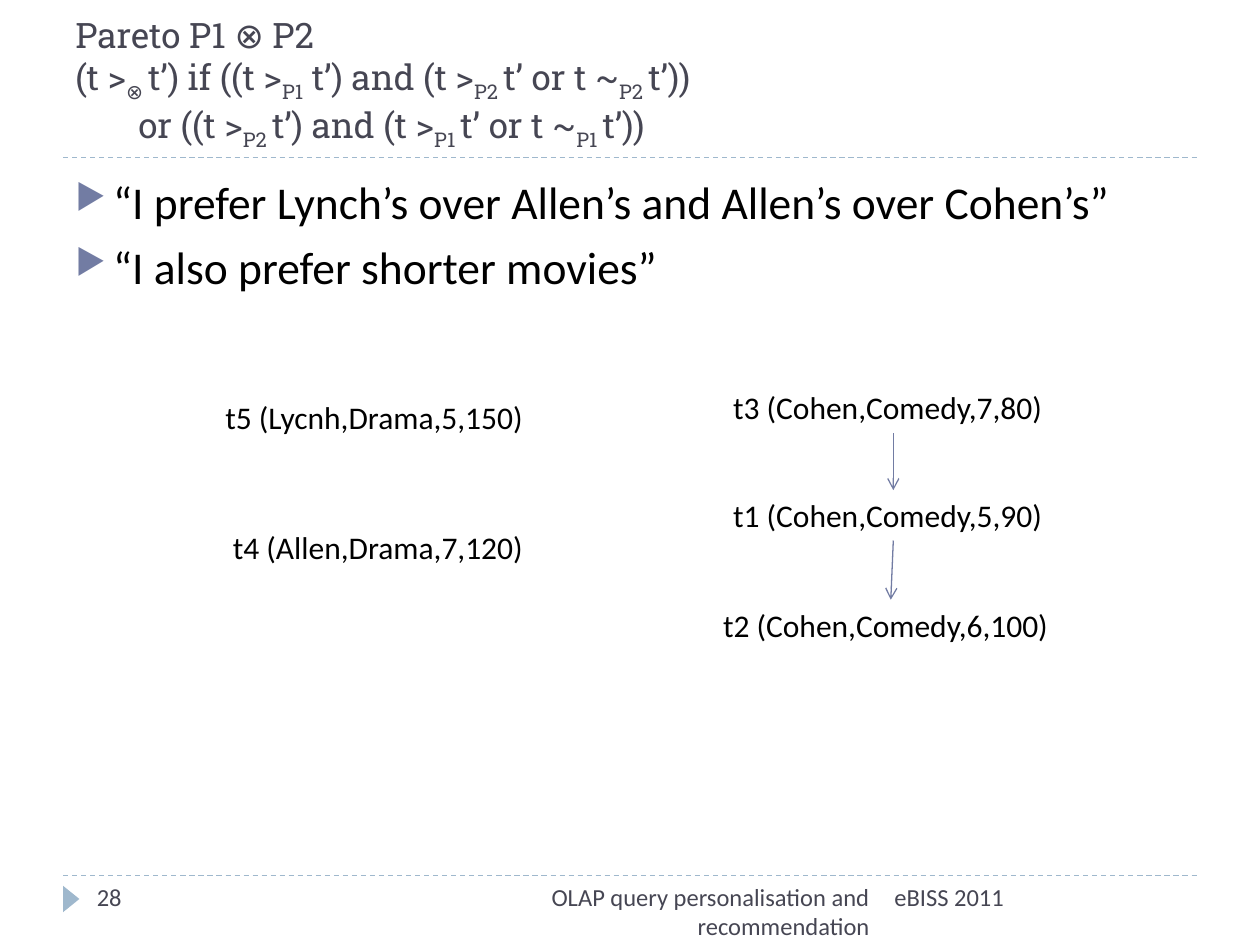
from lxml import etree
from pptx import Presentation
from pptx.dml.color import RGBColor
from pptx.enum.dml import MSO_LINE
from pptx.enum.shapes import MSO_CONNECTOR, MSO_SHAPE
from pptx.enum.text import MSO_ANCHOR, PP_ALIGN
from pptx.oxml.ns import qn
from pptx.util import Inches, Pt

STRAIGHT = MSO_CONNECTOR.STRAIGHT
TRIANGLE = MSO_SHAPE.ISOSCELES_TRIANGLE
DASH = MSO_LINE.DASH
BOTTOM = MSO_ANCHOR.BOTTOM
RIGHT = PP_ALIGN.RIGHT

COLORS = {"ink": "464653", "text": "000000", "rule": "9FB8CD", "accent": "727CA3"}
TITLE = {"name": "Roboto Slab", "size": Pt(20), "color": "ink"}
BODY = {"name": "Calibri", "size": Pt(26), "color": "text"}
LABEL = {"name": "Calibri", "size": Pt(18), "color": "text"}
FOOT = {"name": "Calibri", "size": Pt(14), "color": "ink"}

# Odd parts between underscores are subscripts.
FORMULA = [
    "Pareto P1 ⊗ P2",
    "(t >_⊗ _t’) if ((t >_P1_ t’) and (t >_P2 _t’ or t ~_P2 _t’))",
    "\tor ((t >_P2 _t’) and (t >_P1 _t’ or t ~_P1 _t’))",
]
WISHES = [
    "“I prefer Lynch’s over Allen’s and Allen’s over Cohen’s”",
    "“I also prefer shorter movies”",
]
# Text, left, top and width inside the graph box
TUPLES = [
    ("t5 (Lycnh,Drama,5,150)", 0, 0.08, 2.61),
    ("t4 (Allen,Drama,7,120)", 0.06, 1.11, 2.55),
    ("t3 (Cohen,Comedy,7,80)", 4.03, 0, 2.74),
    ("t1 (Cohen,Comedy,5,90)", 4.03, 0.86, 2.74),
    ("t2 (Cohen,Comedy,6,100)", 3.95, 1.73, 2.86),
]
ARROWS = [(5.4, 0.41, 5.4, 0.86), (5.4, 1.26, 5.38, 1.73)]


def rgb(name):
    return RGBColor.from_string(COLORS[name])


def add_box(slide, left, top, width, height, wrap=True):
    box = slide.shapes.add_textbox(*map(Inches, (left, top, width, height)))
    box.text_frame.word_wrap = wrap
    return box.text_frame


def add_run(para, text, style):
    run = para.add_run()
    run.text = text
    for key, value in style.items():
        if key == "color":
            run.font.color.rgb = rgb(value)
        else:
            setattr(run.font, key, value)
    return run


def add_line(slide, ends, color):
    line = slide.shapes.add_connector(STRAIGHT, *map(Inches, ends))
    line.line.color.rgb = rgb(color)
    line.line.width = Pt(0.75)
    etree.SubElement(line._element.spPr, qn("a:effectLst"))
    return line.line


def add_rule(slide, left, top, width):
    add_line(slide, (left, top, left + width, top), "rule").dash_style = DASH


def add_bullet(para):
    """Hang the paragraph on a coloured triangle."""
    props = para._p.get_or_add_pPr()
    indent = Inches(0.3)
    props.set("marL", str(indent))
    props.set("indent", str(-indent))
    color = etree.SubElement(props, qn("a:buClr"))
    etree.SubElement(color, qn("a:srgbClr"), val=COLORS["accent"])
    etree.SubElement(props, qn("a:buSzPct"), val="76000")
    etree.SubElement(props, qn("a:buChar"), char="▶")


def add_title(slide, left, top, width, height):
    frame = add_box(slide, left, top, width, height)
    frame.vertical_anchor = BOTTOM
    para = frame.paragraphs[0]
    for row, line in enumerate(FORMULA):
        if row:
            para.add_line_break()
        for part, text in enumerate(line.split("_")):
            run = add_run(para, text, TITLE)
            if part % 2:
                run.font._element.set("baseline", "-25000")
    add_rule(slide, left, top + height, width)


def add_wishes(slide, left, top, width, height):
    frame = add_box(slide, left, top, width, height)
    for row, text in enumerate(WISHES):
        para = frame.add_paragraph() if row else frame.paragraphs[0]
        para.space_before = Pt(6)
        add_bullet(para)
        add_run(para, text, BODY)


def add_graph(slide, left, top):
    for text, x, y, width in TUPLES:
        frame = add_box(slide, left + x, top + y, width, 0.4, wrap=False)
        add_run(frame.paragraphs[0], text, LABEL)
    for x1, y1, x2, y2 in ARROWS:
        ends = (left + x1, top + y1, left + x2, top + y2)
        line = add_line(slide, ends, "accent")
        etree.SubElement(line._get_or_add_ln(), qn("a:tailEnd"), type="arrow")


def add_footer(slide, left, top, width):
    add_rule(slide, left, top, width)
    spot = (left - 0.04, top + 0.12, 0.21, 0.13)
    mark = slide.shapes.add_shape(TRIANGLE, *map(Inches, spot))
    mark.rotation = 90
    mark.shadow.inherit = False
    mark.fill.solid()
    mark.fill.fore_color.rgb = rgb("rule")
    mark.line.fill.background()
    notes = [
        ("28", 0.17, 2.17, None),
        ("OLAP query personalisation and recommendation", 2.67, 3.83, RIGHT),
        ("eBISS 2011", 6.5, 2.5, None),
    ]
    for text, x, span, align in notes:
        para = add_box(slide, left + x, top, span, 0.4).paragraphs[0]
        para.alignment = align
        add_run(para, text, FOOT)


def main():
    deck = Presentation()
    deck.slide_width, deck.slide_height = Inches(10), Inches(7.5)
    slide = deck.slides.add_slide(deck.slide_layouts[6])
    add_title(slide, 0.5, 0.17, 9, 1.08)
    add_wishes(slide, 0.5, 1.33, 9, 1.24)
    add_graph(slide, 1.69, 3.03)
    add_footer(slide, 0.5, 6.95, 9)
    deck.save("out.pptx")


if __name__ == "__main__":
    main()
